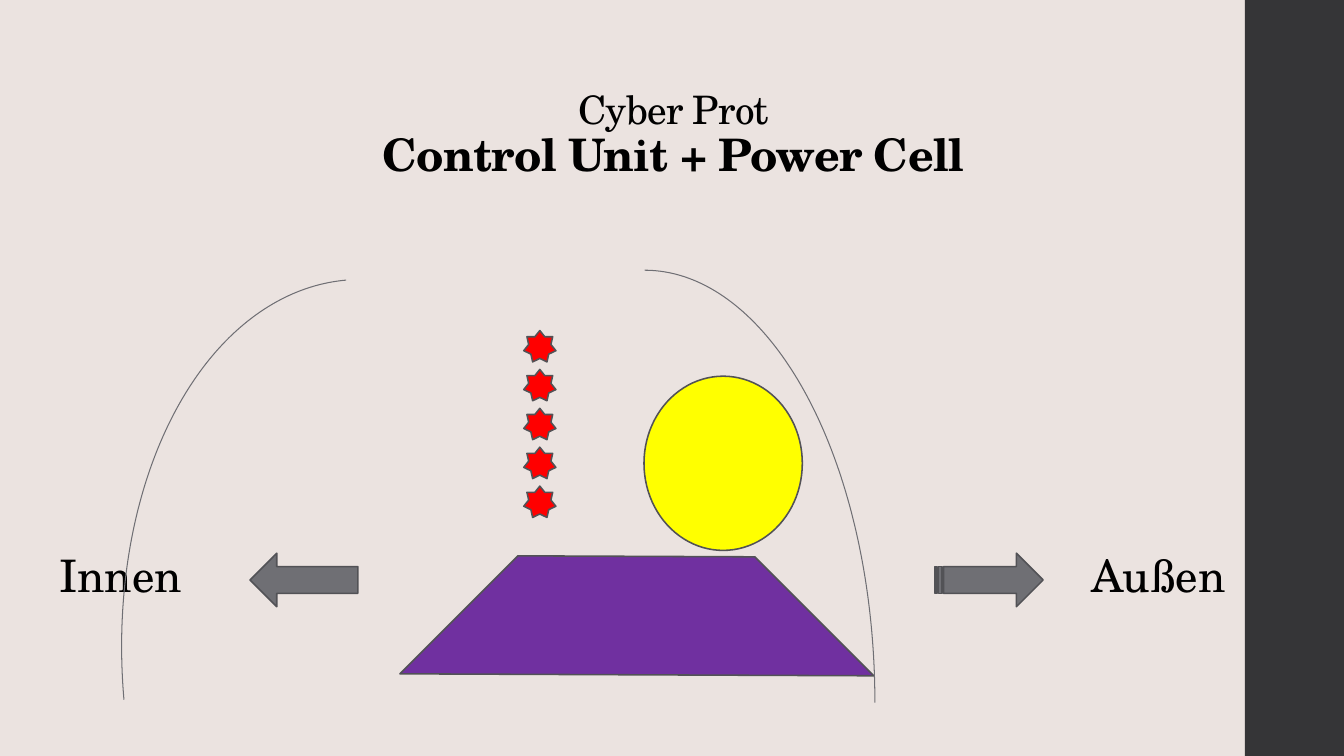
from pptx import Presentation
from pptx.dml.color import RGBColor
from pptx.enum.shapes import MSO_SHAPE as SHAPE
from pptx.enum.text import MSO_ANCHOR as ANCHOR, PP_ALIGN as ALIGN
from pptx.util import Cm, Pt

FONT = "TeX Gyre Schola"
COLORS = {
    "background": "EBE3E0",
    "sidebar": "353537",
    "text": "000000",
    "outline": "525256",
    "gray": "6F6F74",
    "purple": "7030A0",
    "yellow": "FFFF00",
    "red": "FF0000",
}


def rgb(name):
    return RGBColor.from_string(COLORS[name])


def add_run(p, text, size=32, bold=False, spacing=None):
    r = p.add_run()
    r.text = text
    r.font.name = FONT
    r.font.size = Pt(size)
    r.font.bold = bold
    r.font.color.rgb = rgb("text")
    if spacing is not None:
        r.font._element.set("spc", str(round(spacing * 100)))
    return r


def add_shape(s, kind, box, fill=None, line="outline", width=1.1, rotation=0):
    """Add a preset shape; box is left, top, width, height in cm."""
    sp = s.shapes.add_shape(kind, *map(Cm, box))
    sp.shadow.inherit = False
    sp.rotation = rotation
    if fill:
        sp.fill.solid()
        sp.fill.fore_color.rgb = rgb(fill)
    else:
        sp.fill.background()
    if line:
        sp.line.color.rgb = rgb(line)
        sp.line.width = Pt(width)
    else:
        sp.line.fill.background()
    return sp


def add_arc(s, box, start, end, rotation=0):
    """Add an arc between two angles in degrees, clockwise from the right."""
    sp = add_shape(s, SHAPE.ARC, box, line="gray", width=0.75, rotation=rotation)
    for i, angle in enumerate((start, end)):
        sp.adjustments[i] = angle * 0.6


def add_label(s, text, left, width):
    tf = s.shapes.add_textbox(Cm(left), Cm(13.67), Cm(width), Cm(1.63)).text_frame
    tf.word_wrap = False
    add_run(tf.paragraphs[0], text)


def set_title(s):
    title = s.shapes.title
    title.left, title.top = Cm(3.51), Cm(1.02)
    title.width, title.height = Cm(26.92), Cm(3.68)
    tf = title.text_frame
    tf.word_wrap = True
    tf.vertical_anchor = ANCHOR.BOTTOM
    p = tf.paragraphs[0]
    p.alignment = ALIGN.CENTER
    p.line_spacing = 0.9
    add_run(p, "Cyber Prot", size=28, spacing=-0.5)
    p.add_line_break()
    add_run(p, "Control Unit + Power Cell", bold=True, spacing=-0.5)


def main():
    prs = Presentation()
    prs.slide_width, prs.slide_height = Cm(33.87), Cm(19.05)
    s = prs.slides.add_slide(prs.slide_layouts[5])
    s.background.fill.solid()
    s.background.fill.fore_color.rgb = rgb("background")

    add_shape(s, SHAPE.RECTANGLE, (31.37, 0, 2.5, 19.05), "sidebar", line=None)
    set_title(s)

    add_shape(s, SHAPE.DIAGONAL_STRIPE, (11.81, 12.8, 8.48, 8.41), "purple", rotation=45)
    add_shape(s, SHAPE.OVAL, (16.23, 9.48, 3.99, 4.39), "yellow")

    add_shape(s, SHAPE.LEFT_ARROW, (6.3, 13.94, 2.72, 1.35), "gray")
    add_label(s, "Innen", 1.24, 3.63)
    add_shape(s, SHAPE.STRIPED_RIGHT_ARROW, (23.57, 13.94, 2.72, 1.35), "gray")
    add_label(s, "Außen", 27.25, 3.96)

    for i in range(5):
        add_shape(s, SHAPE.STAR_7_POINT, (13.2, 8.33 + 0.98 * i, 0.81, 0.79), "red")

    add_arc(s, (10.44, 6.81, 11.61, 21.79), 270, 0)
    add_arc(s, (3.1, 7.02, 13, 20.09), 180, 270, rotation=-5)

    prs.save("out.pptx")


if __name__ == "__main__":
    main()
